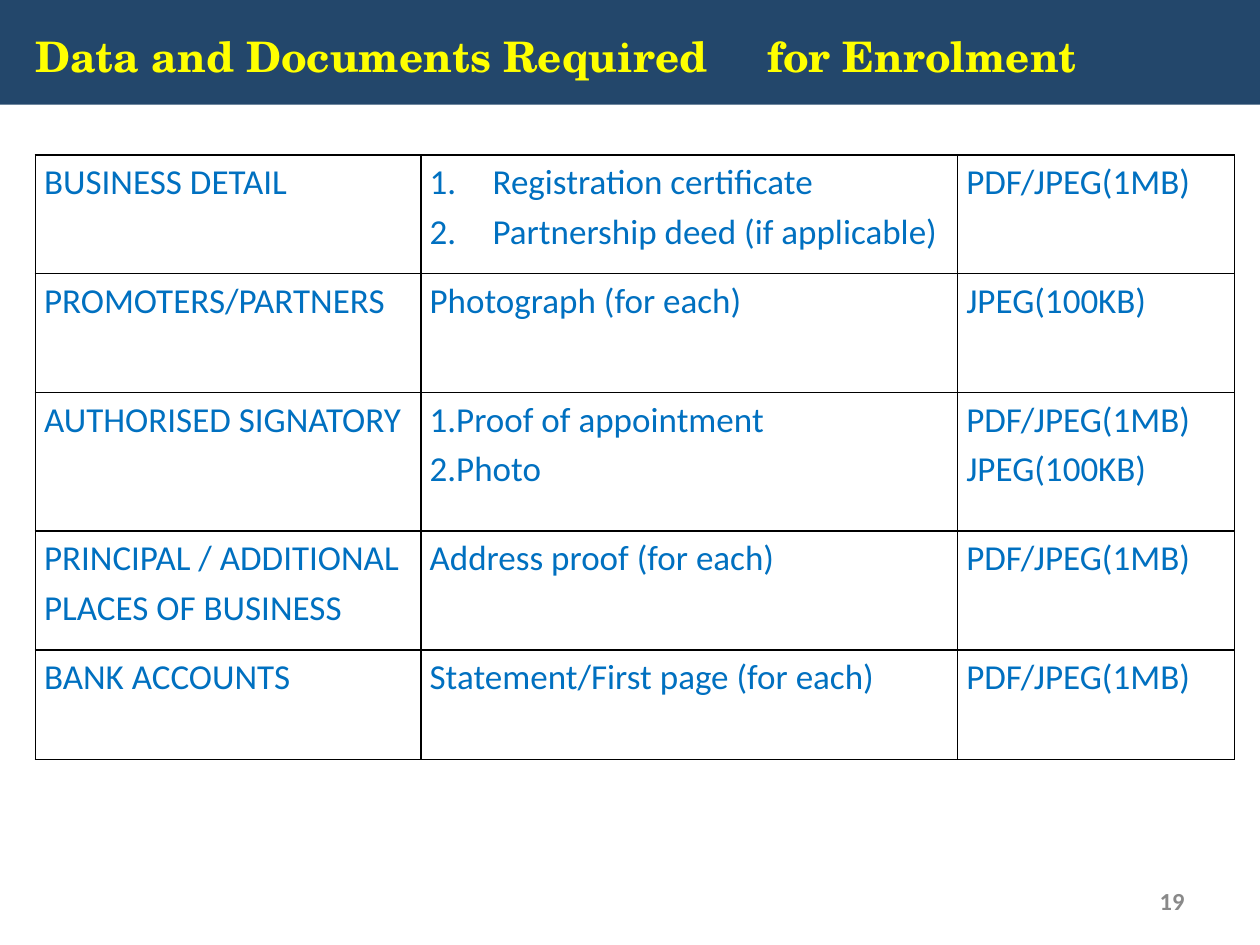
from lxml import etree
from pptx import Presentation, util as u
from pptx.dml.color import RGBColor
from pptx.enum import text as t
from pptx.oxml import ns

NAVY, YELLOW, BLUE, GREY, BLACK = "23476B", "FFFF00", "0070C0", "898989", "000000"
COLUMNS = [3.06, 4.26, 2.2]
ROWS = [0.94, 0.94, 1.1, 0.94, 0.87]
NUMBERED = (0, 1)  # row and column of the cell with automatic numbers
DOCUMENTS = [
    ["BUSINESS DETAIL", "Registration certificate\nPartnership deed (if applicable)", "PDF/JPEG(1MB)"],
    ["PROMOTERS/PARTNERS", "Photograph (for each)", "JPEG(100KB)"],
    ["AUTHORISED SIGNATORY", "1.Proof of appointment\n2.Photo", "PDF/JPEG(1MB)\nJPEG(100KB)"],
    ["PRINCIPAL / ADDITIONAL PLACES OF BUSINESS", "Address proof (for each)", "PDF/JPEG(1MB)"],
    ["BANK ACCOUNTS", "Statement/First page (for each)", "PDF/JPEG(1MB)"],
]


def color(value):
    return RGBColor.from_string(value)


def add_child(parent, tag, **attributes):
    child = etree.SubElement(parent, ns.qn(tag))
    for name, value in attributes.items():
        child.set(name, str(value))
    return child


def write(frame, content, size, fill, font="Calibri", bold=False,
          align=t.PP_ALIGN.LEFT, spacing=1.0):
    """Write one paragraph for each line of the content."""
    frame.word_wrap = True
    for index, line in enumerate(content.split("\n")):
        paragraph = frame.paragraphs[0] if index == 0 else frame.add_paragraph()
        paragraph.alignment = align
        paragraph.line_spacing = spacing
        run = paragraph.add_run()
        run.text = line
        run.font.name = font
        run.font.size = u.Pt(size)
        run.font.bold = bold
        run.font.color.rgb = color(fill)


def number_paragraphs(frame):
    for paragraph in frame.paragraphs:
        properties = paragraph._p.get_or_add_pPr()
        properties.set("marL", str(u.Inches(0.5)))
        properties.set("indent", str(-u.Inches(0.5)))
        add_child(properties, "a:buFont", typeface="+mj-lt")
        add_child(properties, "a:buAutoNum", type="arabicPeriod")


def outline_cell(cell):
    """Draw the four borders, which go before the cell's fill."""
    properties = cell._tc.get_or_add_tcPr()
    for position, side in enumerate(["a:lnL", "a:lnR", "a:lnT", "a:lnB"]):
        line = add_child(properties, side, w=u.Pt(1))
        add_child(add_child(line, "a:solidFill"), "a:srgbClr", val=BLACK)
        properties.insert(position, line)


def place(shape, box):
    shape.left, shape.top, shape.width, shape.height = map(u.Inches, box)


def add_title_band(slide, box):
    title = slide.shapes.title
    place(title, box)
    title.fill.solid()
    title.fill.fore_color.rgb = color(NAVY)
    frame = title.text_frame
    frame.auto_size = t.MSO_AUTO_SIZE.NONE
    frame.vertical_anchor = t.MSO_ANCHOR.MIDDLE
    frame.margin_left, frame.margin_right = u.Inches(0.29), u.Inches(0.1)
    frame.margin_top = frame.margin_bottom = 0
    write(frame, "Data and Documents Required\tfor Enrolment", 24, YELLOW,
          font="TeX Gyre Schola", bold=True, spacing=1.15)
    # Tab stop for the second half of the heading
    tabs = add_child(frame.paragraphs[0]._p.get_or_add_pPr(), "a:tabLst")
    add_child(tabs, "a:tab", pos=u.Inches(5.81), algn="l")


def add_document_table(slide, box):
    graphic = slide.shapes.add_table(len(ROWS), len(COLUMNS), *map(u.Inches, box))
    table = graphic.table
    table.first_row = table.horz_banding = False
    left, top, width, height = box
    for column, share in zip(table.columns, COLUMNS):
        column.width = u.Inches(width * share / sum(COLUMNS))
    for row, share in zip(table.rows, ROWS):
        row.height = u.Inches(height * share / sum(ROWS))
    for row, contents in enumerate(DOCUMENTS):
        for column, content in enumerate(contents):
            cell = table.cell(row, column)
            cell.margin_left = cell.margin_right = u.Inches(0.07)
            cell.margin_top = cell.margin_bottom = 0
            cell.fill.background()
            outline_cell(cell)
            write(cell.text_frame, content, 20, BLUE, spacing=1.15)
            if (row, column) == NUMBERED:
                number_paragraphs(cell.text_frame)


def add_page_number(slide, box):
    frame = slide.shapes.add_textbox(*map(u.Inches, box)).text_frame
    frame.vertical_anchor = t.MSO_ANCHOR.MIDDLE
    write(frame, "19", 14, GREY, bold=True, align=t.PP_ALIGN.RIGHT)


def main():
    presentation = Presentation()
    presentation.slide_width, presentation.slide_height = u.Inches(10), u.Inches(7.5)
    slide = presentation.slides.add_slide(presentation.slide_layouts[5])
    add_title_band(slide, (-0.01, 0, 10.03, 0.83))
    add_page_number(slide, (7.17, 6.95, 2.33, 0.4))
    add_document_table(slide, (0.28, 1.23, 9.52, 4.8))
    presentation.save("out.pptx")


if __name__ == "__main__":
    main()
